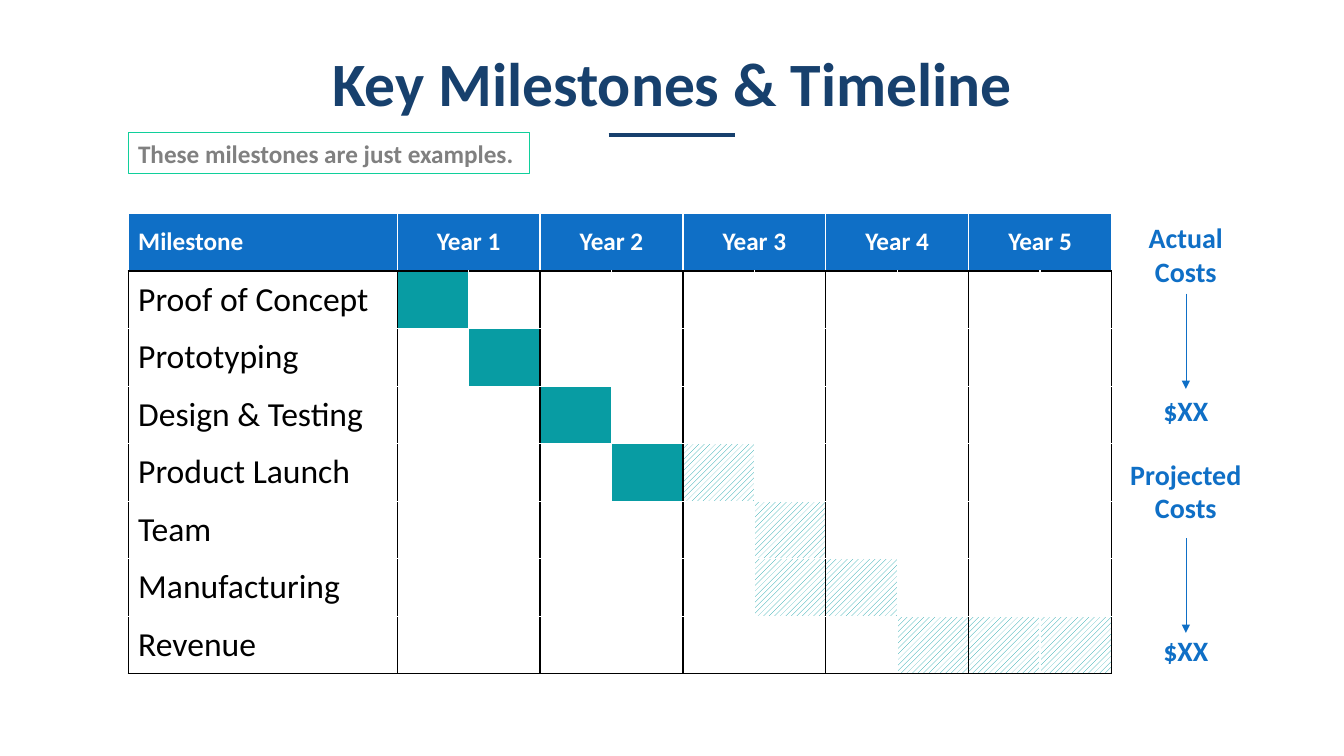
from lxml import etree
from pptx import Presentation
from pptx.dml.color import RGBColor
from pptx.enum.dml import MSO_PATTERN
from pptx.enum.shapes import MSO_CONNECTOR, MSO_SHAPE
from pptx.enum.text import MSO_ANCHOR, PP_ALIGN
from pptx.oxml.ns import qn
from pptx.util import Cm, Pt

LEFT, MID = PP_ALIGN.LEFT, PP_ALIGN.CENTER
CENTRE = MSO_ANCHOR.MIDDLE
HATCH = MSO_PATTERN.WIDE_UPWARD_DIAGONAL
LINE = MSO_CONNECTOR.STRAIGHT
RECT = MSO_SHAPE.RECTANGLE

TITLE = "Key Milestones & Timeline"
NOTE = "These milestones are just examples."
HEAD = "Milestone"
YEARS = ["Year 1", "Year 2", "Year 3", "Year 4", "Year 5"]
STEPS = [
    ("Proof of Concept", [1], []),
    ("Prototyping", [2], []),
    ("Design & Testing", [3], []),
    ("Product Launch", [4], [5]),
    ("Team", [], [6]),
    ("Manufacturing", [], [6, 7]),
    ("Revenue", [], [8, 9, 10]),
]
COSTS = [
    ("Actual Costs", 5.44, 7.4, 9.8, "$XX", 9.8),
    ("Projected Costs", 11.4, 13.56, 15.95, "$XX", 15.85),
]

NAVY, BLUE, TEAL, MINT = "17406D", "0F6FC6", "089CA3", "10CF9B"
GREY, WHITE, BLACK = "808080", "FFFFFF", "000000"
FONT = "Calibri"
GRID_X, GRID_Y = 3.23, 5.38
NAME_W, HALF_W, ROW_H = 6.78, 1.8, 1.45
COST_X, COST_W, LABEL_H, VALUE_H = 28.17, 3.43, 1.96, 1.12


def rgb(code):
    return RGBColor.from_string(code)


def write(frame, text, size, color, bold=True, align=LEFT):
    frame.text = text
    para = frame.paragraphs[0]
    para.alignment = align
    font = para.runs[0].font
    font.name, font.size, font.bold = FONT, Pt(size), bold
    font.color.rgb = rgb(color)
    return para


def draw(x1, y1, x2, y2, color, width):
    line = slide.shapes.add_connector(LINE, Cm(x1), Cm(y1), Cm(x2), Cm(y2))
    line.line.color.rgb = rgb(color)
    line.line.width = Pt(width)
    etree.SubElement(line._element.spPr, qn("a:effectLst"))
    return line


def edge(cell, sides):
    props = cell._tc.get_or_add_tcPr()
    for side, color in zip("LRTB", sides):
        line = etree.SubElement(props, qn("a:ln" + side), w=str(Pt(1)))
        fill = etree.SubElement(line, qn("a:solidFill"))
        etree.SubElement(fill, qn("a:srgbClr"), val=color)


def paint(cell, color):
    cell.fill.solid()
    cell.fill.fore_color.rgb = rgb(color)


def box(text, top, height):
    shape = slide.shapes.add_textbox(Cm(COST_X), Cm(top), Cm(COST_W), Cm(height))
    shape.text_frame.word_wrap = True
    write(shape.text_frame, text, 20, BLUE, align=MID)
    return shape


deck = Presentation()
deck.slide_width, deck.slide_height = Cm(33.87), Cm(19.05)
slide = deck.slides.add_slide(deck.slide_layouts[5])

title = slide.shapes.title
title.left, title.top, title.width, title.height = Cm(1.45), Cm(1.27), Cm(30.99), Cm(1.83)
frame = title.text_frame
frame.margin_left = frame.margin_right = frame.margin_top = frame.margin_bottom = 0
frame.vertical_anchor = CENTRE
write(frame, TITLE, 44, NAVY, align=MID).line_spacing = 0.9

rows, cols = len(STEPS) + 1, 2 * len(YEARS) + 1
grid = slide.shapes.add_table(
    rows, cols, Cm(GRID_X), Cm(GRID_Y),
    Cm(NAME_W + HALF_W * (cols - 1)), Cm(ROW_H * rows)).table
grid.first_row = grid.horz_banding = False
for i, col in enumerate(grid.columns):
    col.width = Cm(HALF_W if i else NAME_W)
for row in grid.rows:
    row.height = Cm(ROW_H)

for i in range(cols):
    cell = grid.cell(0, i)
    edge(cell, [WHITE, WHITE, WHITE, BLACK])
    paint(cell, BLUE)
    cell.vertical_anchor = CENTRE
write(grid.cell(0, 0).text_frame, HEAD, 18, WHITE)
for i, year in enumerate(YEARS):
    cell = grid.cell(0, 2 * i + 1)
    cell.merge(grid.cell(0, 2 * i + 2))
    write(cell.text_frame, year, 18, WHITE, align=MID)

for r, (name, done, plan) in enumerate(STEPS, 1):
    for c in range(cols):
        cell = grid.cell(r, c)
        edge(cell, [
            BLACK if c == 0 or c % 2 else WHITE,
            BLACK if c % 2 == 0 else WHITE,
            BLACK if r == 1 else WHITE,
            BLACK if r == rows - 1 else WHITE,
        ])
        if c in done:
            paint(cell, TEAL)
        elif c in plan:
            cell.fill.patterned()
            cell.fill.pattern = HATCH
            cell.fill.fore_color.rgb = rgb(TEAL)
            cell.fill.back_color.rgb = rgb(WHITE)
        else:
            cell.fill.background()
    label = grid.cell(r, 0)
    label.vertical_anchor = CENTRE
    write(label.text_frame, name, 24, BLACK, bold=False)

note = slide.shapes.add_shape(RECT, Cm(GRID_X), Cm(3.35), Cm(10.11), Cm(1.02))
note.shadow.inherit = False
note.fill.solid()
note.fill.fore_color.rgb = rgb(WHITE)
note.line.color.rgb = rgb(MINT)
note.line.width = Pt(0.75)
note.text_frame.word_wrap = True
note.text_frame.vertical_anchor = MSO_ANCHOR.TOP
write(note.text_frame, NOTE, 18, GREY).space_after = Pt(3)

for text, top, start, end, value, low in COSTS:
    name = box(text, top, LABEL_H)
    sum_box = box(value, low, VALUE_H)
    x = COST_X + COST_W / 2
    arrow = draw(x, start, x, end, BLUE, 0.5)
    etree.SubElement(arrow.line._get_or_add_ln(), qn("a:tailEnd"), type="triangle")
    if end == low:
        arrow.begin_connect(name, 2)
        arrow.end_connect(sum_box, 0)

draw(15.34, 3.4, 18.52, 3.4, NAVY, 3)
deck.save("out.pptx")
